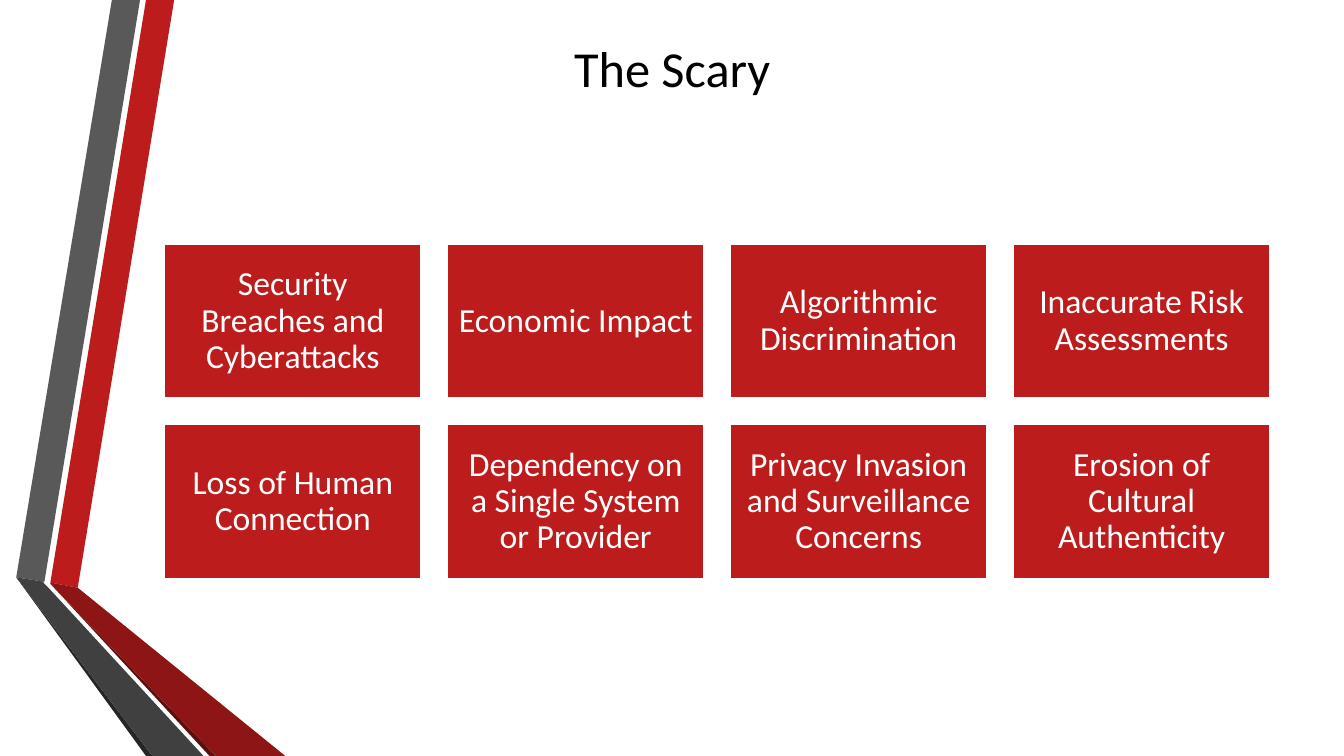
from dataclasses import dataclass

from pptx import Presentation
from pptx.dml.color import RGBColor
from pptx.enum.shapes import MSO_SHAPE
from pptx.enum.text import MSO_ANCHOR, PP_ALIGN
from pptx.util import Cm, Pt


@dataclass(frozen=True)
class Theme:
    font: str = "Calibri"
    title_size: int = 36
    box_size: int = 24
    black: str = "000000"
    white: str = "FFFFFF"
    red: str = "BC1C1C"
    dark_red: str = "8D1515"
    deep_red: str = "5E0E0E"
    grey: str = "595959"
    dark_grey: str = "404040"
    deep_grey: str = "262626"


theme = Theme()


def format_text(shape, size, color):
    tf = shape.text_frame
    tf.word_wrap = True
    tf.vertical_anchor = MSO_ANCHOR.MIDDLE
    p = tf.paragraphs[0]
    p.alignment = PP_ALIGN.CENTER
    p.font.name = theme.font
    p.font.size = Pt(size)
    p.font.color.rgb = RGBColor.from_string(color)
    return tf


prs = Presentation()
prs.slide_width, prs.slide_height = Cm(33.87), Cm(19.05)
s = prs.slides.add_slide(prs.slide_layouts[5])

# Folded ribbons on the left, corner points in cm
ribbons = [
    (theme.red, [(1.27, 14.68), (1.96, 14.81), (4.39, 0), (3.68, 0)]),
    (theme.grey, [(3.53, 0), (2.82, 0), (0.41, 14.55), (1.12, 14.66)]),
    (theme.deep_grey, [(0.41, 14.55), (3.68, 19.05), (3.84, 19.05)]),
    (theme.deep_red, [(1.27, 14.71), (5.28, 19.05), (5.44, 19.05)]),
    (theme.dark_red, [(1.27, 14.71), (5.44, 19.05), (7.19, 19.05),
                      (1.96, 14.81), (1.27, 14.68)]),
    (theme.dark_grey, [(5.13, 19.05), (1.22, 14.81), (1.09, 14.68),
                       (1.12, 14.66), (0.41, 14.55), (3.84, 19.05)]),
]
for color, corners in ribbons:
    start, *rest = [(Cm(x), Cm(y)) for x, y in corners]
    builder = s.shapes.build_freeform(*start)
    builder.add_line_segments(rest, close=True)
    sp = builder.convert_to_shape()
    sp.shadow.inherit = False
    sp.fill.solid()
    sp.fill.fore_color.rgb = RGBColor.from_string(color)
    sp.line.fill.background()

# Title
title = s.shapes.title
title.left, title.top, title.width, title.height = Cm(3.02), Cm(0.76), Cm(27.84), Cm(1.85)
title.text_frame.text = "The Scary"
format_text(title, theme.title_size, theme.black)

# Grid of risks, four to a row
risks = [
    "Security Breaches and Cyberattacks",
    "Economic Impact",
    "Algorithmic Discrimination",
    "Inaccurate Risk Assessments",
    "Loss of Human Connection",
    "Dependency on a Single System or Provider",
    "Privacy Invasion and Surveillance Concerns",
    "Erosion of Cultural Authenticity",
]
columns = 4
box_width, box_height, gap = 6.48, 3.89, 0.65
for i, risk in enumerate(risks):
    row, column = divmod(i, columns)
    left = 4.14 + column * (box_width + gap)
    top = 6.15 + row * (box_height + gap)
    sp = s.shapes.add_shape(MSO_SHAPE.RECTANGLE, Cm(left), Cm(top),
                            Cm(box_width), Cm(box_height))
    sp.shadow.inherit = False
    sp.fill.solid()
    sp.fill.fore_color.rgb = RGBColor.from_string(theme.red)
    sp.line.color.rgb = RGBColor.from_string(theme.white)
    sp.line.width = Pt(1.25)
    sp.text_frame.text = risk
    tf = format_text(sp, theme.box_size, theme.white)
    tf.margin_left = tf.margin_right = tf.margin_top = tf.margin_bottom = Cm(0.25)
    tf.paragraphs[0].line_spacing = 0.9

prs.save("out.pptx")
